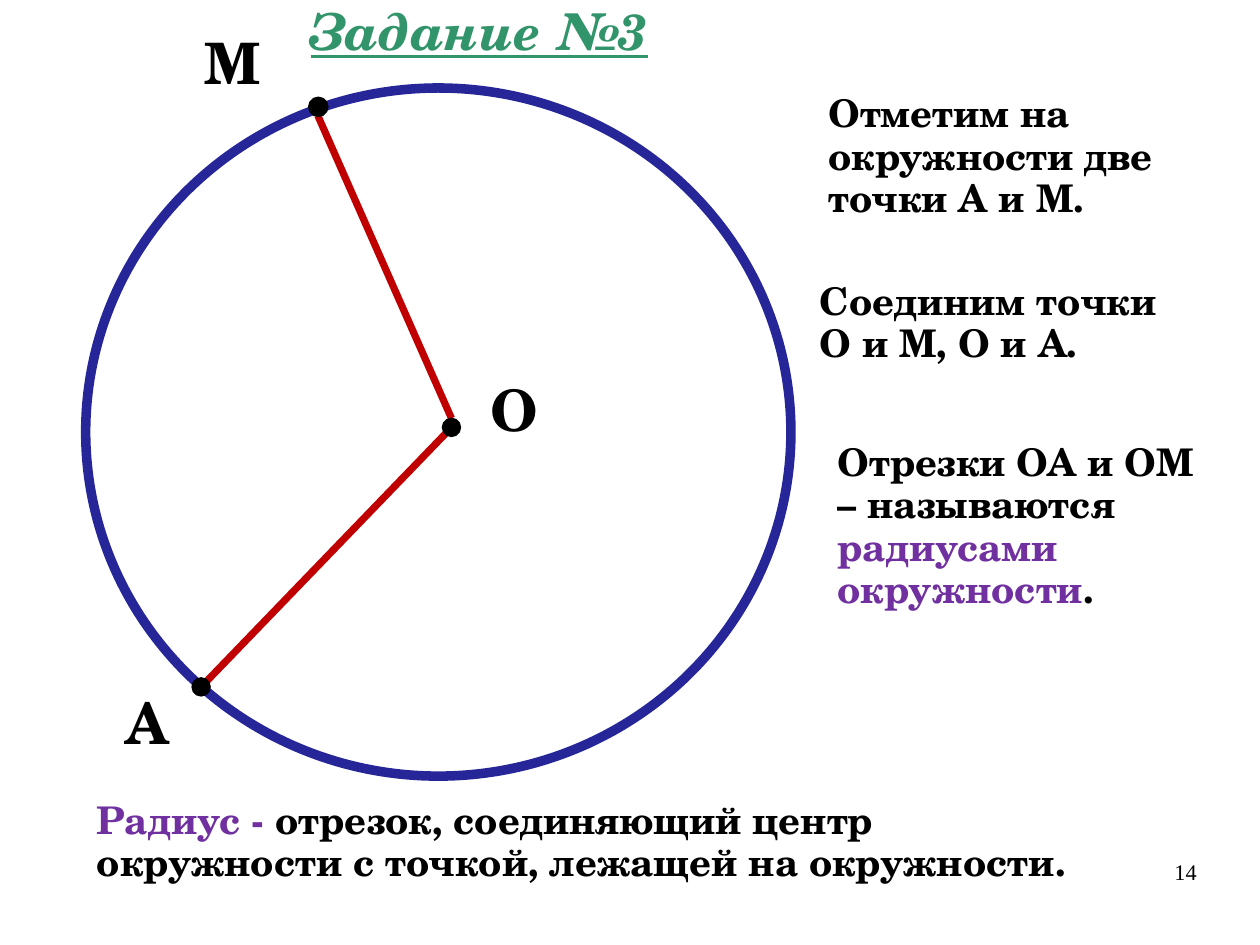
"""Builds a geometry slide that introduces the radius of a circle."""
from lxml.etree import SubElement
from pptx import Presentation
from pptx.dml.color import RGBColor
from pptx.enum.shapes import MSO_CONNECTOR, MSO_SHAPE
from pptx.enum.text import PP_ALIGN
from pptx.oxml.ns import qn
from pptx.util import Inches, Pt

BLACK, PURPLE, GREEN, RED, BLUE = "000000", "7030A0", "32946A", "C00000", "262699"
SCHOLA = "TeX Gyre Schola"
CM_PER_INCH = 2.54


def color(value):
    return RGBColor.from_string(value)


def add_text(left, top, width, height, spans, size=24, align=PP_ALIGN.LEFT,
             font=SCHOLA, bold=True, spacing=0.93, insets=(0.1, 0.05), wrap=True):
    frame = page.shapes.add_textbox(
        Inches(left), Inches(top), Inches(width), Inches(height)).text_frame
    frame.word_wrap = wrap
    frame.margin_left = frame.margin_right = Inches(insets[0])
    frame.margin_top = frame.margin_bottom = Inches(insets[1])
    para = frame.paragraphs[0]
    para.alignment = align
    para.line_spacing = spacing
    para.font.name, para.font.size, para.font.bold = font, Pt(size), bold
    for text, tint in spans:
        span = para.add_run()
        span.text = text
        span.font.color.rgb = color(tint)
    return para


deck = Presentation()
deck.slide_width = Inches(28 / CM_PER_INCH)
deck.slide_height = Inches(21 / CM_PER_INCH)
page = deck.slides.add_slide(deck.slide_layouts[6])

for start, end in [((3.95, 3.74), (1.76, 6.01)), ((3.95, 3.66), (2.78, 1.01))]:
    radius = page.shapes.add_connector(
        MSO_CONNECTOR.STRAIGHT, *map(Inches, start + end))
    radius.line.color.rgb = color(RED)
    radius.line.width = Pt(4.5)
    SubElement(radius._element.spPr, qn("a:effectLst"))

ovals = [
    (0.75, 0.77, 6.17, 6.02, BLUE, 6, False),
    (3.87, 3.66, 0.16, 0.16, BLACK, 0.75, True),
    (2.7, 0.85, 0.17, 0.17, BLACK, 0.75, True),
    (1.68, 5.93, 0.16, 0.16, BLACK, 0.75, True),
]
for left, top, width, height, tint, weight, filled in ovals:
    oval = page.shapes.add_shape(
        MSO_SHAPE.OVAL, Inches(left), Inches(top), Inches(width), Inches(height))
    oval.shadow.inherit = False
    oval.line.color.rgb = color(tint)
    oval.line.width = Pt(weight)
    if filled:
        oval.fill.solid()
        oval.fill.fore_color.rgb = color(tint)
    else:
        oval.fill.background()

for letter, left, top, width in [
        ("О", 4.18, 3.27, 0.52), ("М", 1.68, 0.23, 0.69), ("А", 0.98, 6.01, 0.61)]:
    add_text(left, top, width, 0.68, [(letter, BLACK)], size=36,
             align=PP_ALIGN.CENTER, insets=(0.11, 0.06), wrap=False)

add_text(7.15, 0.77, 3.44, 1.23, [("Отметим на окружности две точки А и М.", BLACK)])
add_text(7.07, 2.41, 3.48, 0.85, [("Соединим точки О и М, О и А.", BLACK)])
add_text(7.23, 3.82, 3.36, 1.6, [
    ("Отрезки ОА и ОМ – называются ", BLACK),
    ("радиусами окружности", PURPLE),
    (".", BLACK)])
add_text(0.75, 6.95, 9.06, 0.85, [
    ("Радиус - ", PURPLE),
    ("отрезок, соединяющий центр окружности с точкой, лежащей на окружности.", BLACK)])
add_text(7.9, 7.53, 2.57, 0.57, [("14", BLACK)], size=14, align=PP_ALIGN.RIGHT,
         font="Times New Roman", bold=False, spacing=0.95, insets=(0, 0))

title = add_text(2.62, 0, 4.84, 0.6, [("Задание №3", GREEN)], size=32)
title.font.italic = True
title.font.underline = True

deck.save("out.pptx")
